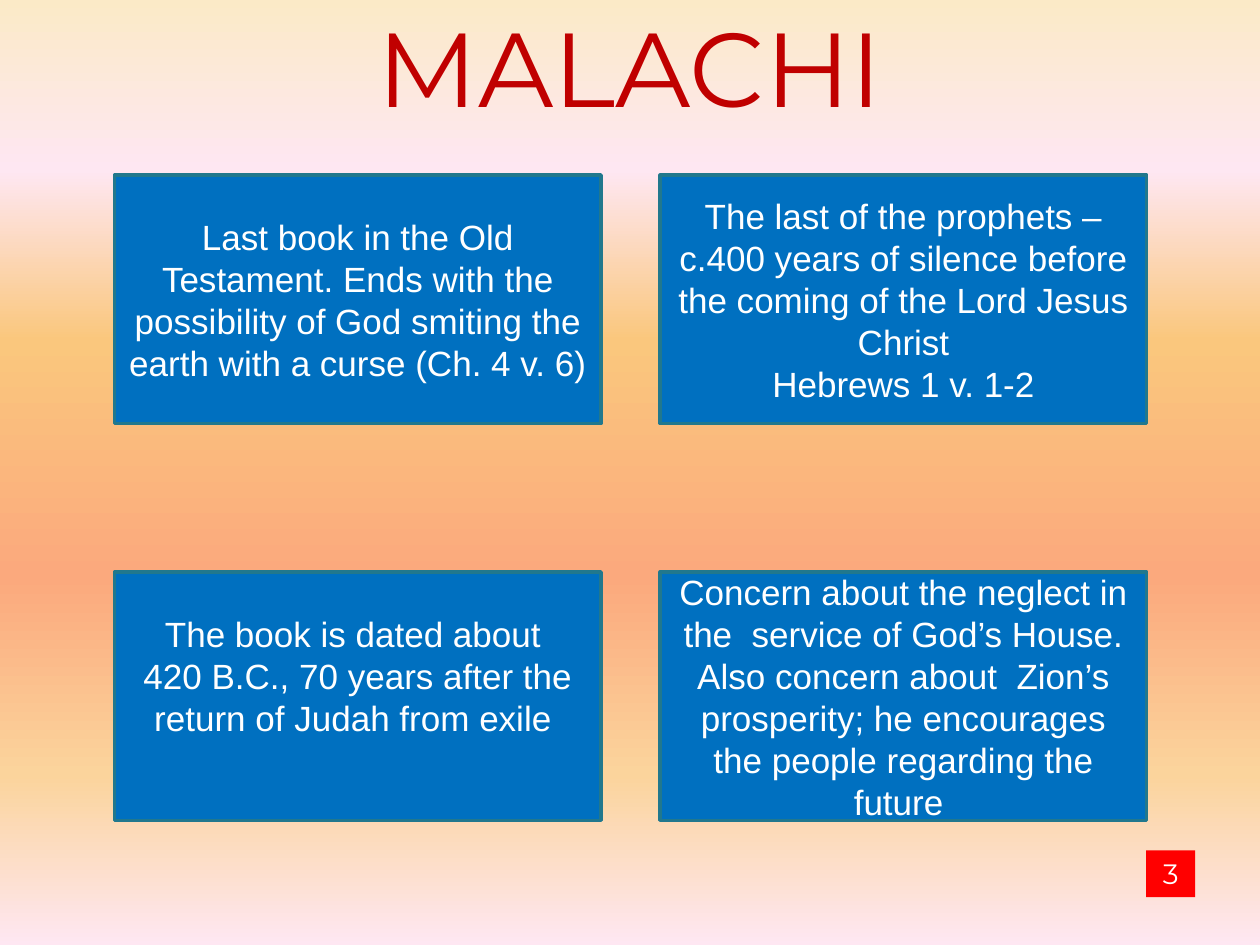
from dataclasses import dataclass

from lxml.etree import SubElement
from pptx import Presentation
from pptx.dml.color import RGBColor
from pptx.enum.shapes import MSO_SHAPE
from pptx.enum.text import MSO_ANCHOR, PP_ALIGN
from pptx.oxml.ns import qn
from pptx.slide import Slide
from pptx.text.text import TextFrame
from pptx.util import Pt

COLOURS = {
    "title": "C00000",
    "card": "0070C0",
    "border": "21788D",
    "badge": "FF0000",
    "text": "FFFFFF",
}
BACKDROP = {0: "FBEAC7", 18: "FEE7F2", 36: "FAC77D", 61: "FBA97D", 82: "FBD49C", 100: "FEE7F2"}
LEFT, TOP, WIDTH, HEIGHT = 65.5, 100, 278, 142
COLUMN_STEP, ROW_STEP = 311.8, 226.8


@dataclass
class Card:
    """A fact about the book, with its place in the grid."""
    row: int
    column: int
    text: str
    bottom_inset: float = 3.6


CARDS = [
    Card(0, 0, "Last book in the Old Testament. Ends with the possibility of God "
               "smiting the earth with a curse (Ch. 4 v. 6)"),
    Card(0, 1, "The last of the prophets – c.400 years of silence before the coming "
               "of the Lord Jesus Christ\nHebrews 1 v. 1-2"),
    Card(1, 0, "The book is dated about \n420 B.C., 70 years after the return of "
               "Judah from exile ", bottom_inset=27.6),
    Card(1, 1, "Concern about the neglect in the  service of God’s House. Also concern "
               "about  Zion’s prosperity; he encourages the people regarding the future "),
]


def colour(name: str) -> RGBColor:
    """Look up a named colour."""
    return RGBColor.from_string(COLOURS[name])


def write(frame: TextFrame, text: str, *, size: float, font: str, ink: str = "text",
          anchor: MSO_ANCHOR = MSO_ANCHOR.TOP) -> None:
    """Fill a frame with centred paragraphs, one for each line of text."""
    frame.word_wrap = True
    frame.vertical_anchor = anchor
    for index, line in enumerate(text.split("\n")):
        para = frame.add_paragraph() if index else frame.paragraphs[0]
        para.alignment = PP_ALIGN.CENTER
        span = para.add_run()
        span.text = line
        span.font.size = Pt(size)
        span.font.name = font
        span.font.color.rgb = colour(ink)


def paint_background(page: Slide) -> None:
    """Give the page its vertical gradient."""
    fill = page.background.fill
    fill.gradient()
    fill.gradient_angle = 270
    stops = page.element.find(".//" + qn("a:gsLst"))
    for stop in list(stops):
        stops.remove(stop)
    for percent, value in BACKDROP.items():
        stop = SubElement(stops, qn("a:gs"), pos=str(percent * 1000))
        SubElement(stop, qn("a:srgbClr"), val=value)


def add_box(page: Slide, left: float, top: float, width: float, height: float,
            fill: str, border: str | None = None) -> TextFrame:
    """Draw a filled rectangle and return its text frame."""
    box = page.shapes.add_shape(MSO_SHAPE.RECTANGLE, Pt(left), Pt(top), Pt(width), Pt(height))
    box.shadow.inherit = False
    box.fill.solid()
    box.fill.fore_color.rgb = colour(fill)
    if border:
        box.line.color.rgb = colour(border)
        box.line.width = Pt(2)
    else:
        box.line.fill.background()
    return box.text_frame


def add_card(page: Slide, card: Card) -> None:
    """Draw one card at its place in the grid."""
    frame = add_box(page, LEFT + card.column * COLUMN_STEP, TOP + card.row * ROW_STEP,
                    WIDTH, HEIGHT, "card", "border")
    frame.margin_bottom = Pt(card.bottom_inset)
    write(frame, card.text, size=20, font="Arial", anchor=MSO_ANCHOR.MIDDLE)


def main() -> None:
    """Build the deck and save it."""
    deck = Presentation()
    deck.slide_width, deck.slide_height = Pt(720), Pt(540)
    page = deck.slides.add_slide(deck.slide_layouts[6])
    paint_background(page)
    title = page.shapes.add_textbox(Pt(0), Pt(-2), Pt(720), Pt(80))
    write(title.text_frame, "MALACHI", size=60, font="Montserrat", ink="title")
    for card in CARDS:
        add_card(page, card)
    badge = add_box(page, 655, 486, 28, 26.7, "badge")
    write(badge, "3", size=16, font="Montserrat")
    deck.save("out.pptx")


if __name__ == "__main__":
    main()
